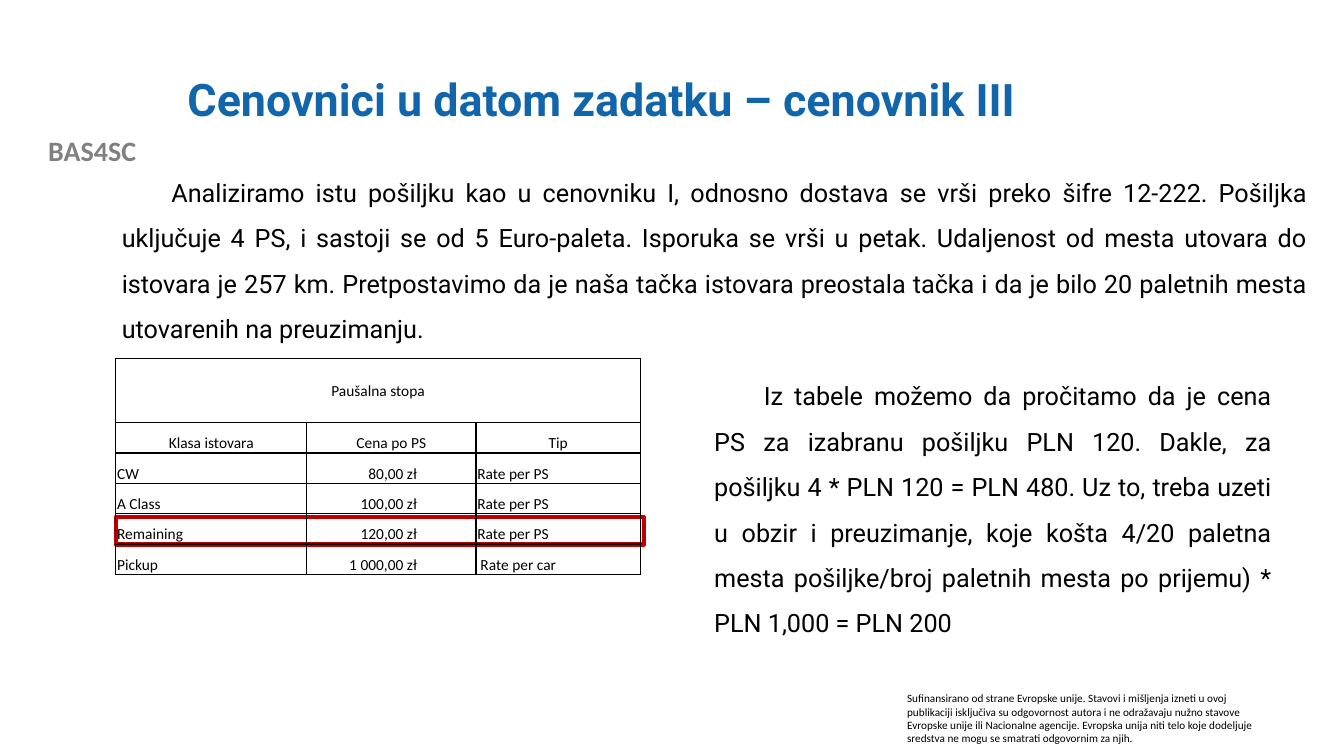
from lxml.etree import SubElement
from pptx import Presentation
from pptx.dml.color import RGBColor
from pptx.enum.shapes import MSO_SHAPE as Shape
from pptx.enum.text import MSO_ANCHOR as Anchor, MSO_AUTO_SIZE as AutoSize, PP_ALIGN as Align
from pptx.oxml.ns import qn
from pptx.util import Cm, Pt

BLACK, BLUE, GRAY, RED = "000000", "1065AB", "808080", "C00000"

TITLE = "Cenovnici u datom zadatku – cenovnik III"
TASK = (
    "Analiziramo istu pošiljku kao u cenovniku I, odnosno dostava se vrši preko šifre 12-222. "
    "Pošiljka uključuje 4 PS, i sastoji se od 5 Euro-paleta. Isporuka se vrši u petak. "
    "Udaljenost od mesta utovara do istovara je 257 km. Pretpostavimo da je naša tačka istovara "
    "preostala tačka i da je bilo 20 paletnih mesta utovarenih na preuzimanju."
)
SOLUTION = (
    "Iz tabele možemo da pročitamo da je cena PS za izabranu pošiljku PLN 120. "
    "Dakle, za pošiljku 4 * PLN 120 = PLN 480. Uz to, treba uzeti u obzir i preuzimanje, "
    "koje košta 4/20 paletna mesta pošiljke/broj paletnih mesta po prijemu) * PLN 1,000 = PLN 200"
)
DISCLAIMER = (
    "Sufinansirano od strane Evropske unije. Stavovi i mišljenja izneti u ovoj publikaciji "
    "isključiva su odgovornost autora i ne odražavaju nužno stavove Evropske unije ili "
    "Nacionalne agencije. Evropska unija niti telo koje dodeljuje sredstva ne mogu se smatrati "
    "odgovornim za njih."
)
TABLE_TITLE = "Paušalna stopa"
TABLE_ROWS = [
    ("Klasa istovara", "Cena po PS", "Tip"),
    ("CW", "80,00 zł", "Rate per PS"),
    ("A Class", "100,00 zł", "Rate per PS"),
    ("Remaining", "120,00 zł", "Rate per PS"),
    ("Pickup", "1 000,00 zł", "Rate per car"),
]
COLUMN_WIDTHS = (4.81, 4.27, 4.14)
COLUMN_ALIGNMENTS = (Align.LEFT, Align.RIGHT, Align.LEFT)
TITLE_ROW_HEIGHT, ROW_HEIGHT = 1.61, 0.765
PRICE_MARGIN = 1.49

BODY_PARAGRAPH = {"alignment": Align.JUSTIFY, "line_spacing": 1.5, "space_after": Pt(6)}


def color(hex_string):
    return RGBColor.from_string(hex_string)


def set_format(target, formats):
    for name, value in formats.items():
        setattr(target, name, value)


def write(paragraph, text, size, font_name, font_color, bold=False, **paragraph_format):
    set_format(paragraph, paragraph_format)
    run = paragraph.add_run()
    run.text = text
    set_format(run.font, {"size": Pt(size), "name": font_name, "bold": bold})
    run.font.color.rgb = color(font_color)


def add_text(slide, box, text, size, font_name, font_color, first_indent=0, **formats):
    frame = slide.shapes.add_textbox(*map(Cm, box)).text_frame
    set_format(frame, {"word_wrap": True, "auto_size": AutoSize.SHAPE_TO_FIT_TEXT})
    paragraph = frame.paragraphs[0]
    if first_indent:
        properties = paragraph._p.get_or_add_pPr()
        properties.set("marL", "0")
        properties.set("indent", str(Cm(first_indent)))
    write(paragraph, text, size, font_name, font_color, **formats)


def fill_title(slide):
    title = slide.shapes.title
    set_format(title, {"left": Cm(4.47), "top": Cm(1.02), "width": Cm(27.08), "height": Cm(3.1)})
    set_format(title.text_frame, {"vertical_anchor": Anchor.MIDDLE, "word_wrap": True,
                                  "auto_size": AutoSize.NONE})
    write(title.text_frame.paragraphs[0], TITLE, 32, "Roboto", BLUE, bold=True,
          alignment=Align.LEFT, line_spacing=0.9)


def add_highlight(slide, box):
    frame = slide.shapes.add_shape(Shape.RECTANGLE, *map(Cm, box))
    frame.shadow.inherit = False
    frame.fill.background()
    frame.line.color.rgb = color(RED)
    frame.line.width = Pt(3)


def add_borders(cell):
    properties = cell._tc.get_or_add_tcPr()
    for side in ("a:lnL", "a:lnR", "a:lnT", "a:lnB"):
        line = SubElement(properties, qn(side), w=str(Pt(1)))
        SubElement(SubElement(line, qn("a:solidFill")), qn("a:srgbClr"), val=BLACK)


def format_cell(cell, anchor):
    add_borders(cell)
    cell.fill.background()
    set_format(cell, {"vertical_anchor": anchor, "margin_left": Cm(0.03), "margin_right": Cm(0.03),
                      "margin_top": Cm(0.03), "margin_bottom": 0})


def add_price_table(slide, left, top):
    height = TITLE_ROW_HEIGHT + ROW_HEIGHT * len(TABLE_ROWS)
    table = slide.shapes.add_table(len(TABLE_ROWS) + 1, len(COLUMN_WIDTHS), Cm(left), Cm(top),
                                   Cm(sum(COLUMN_WIDTHS)), Cm(height)).table
    set_format(table, {"first_row": False, "horz_banding": False})
    for column, width in zip(table.columns, COLUMN_WIDTHS):
        column.width = Cm(width)
    for row in table.rows:
        row.height = Cm(ROW_HEIGHT)
    table.rows[0].height = Cm(TITLE_ROW_HEIGHT)

    for cell in table.rows[0].cells:
        format_cell(cell, Anchor.MIDDLE)
    title_cell = table.cell(0, 0)
    title_cell.merge(table.cell(0, len(COLUMN_WIDTHS) - 1))
    write(title_cell.text_frame.paragraphs[0], TABLE_TITLE, 11, "Calibri", BLACK,
          alignment=Align.CENTER)

    for row_index, values in enumerate(TABLE_ROWS, start=1):
        for column_index, value in enumerate(values):
            cell = table.cell(row_index, column_index)
            format_cell(cell, Anchor.BOTTOM)
            alignment = Align.CENTER if row_index == 1 else COLUMN_ALIGNMENTS[column_index]
            if alignment == Align.RIGHT:
                cell.margin_right = Cm(PRICE_MARGIN)
            write(cell.text_frame.paragraphs[0], value, 11, "Calibri", BLACK, alignment=alignment)
    table.cell(len(TABLE_ROWS), 2).margin_left = Cm(0.11)


def main():
    presentation = Presentation()
    set_format(presentation, {"slide_width": Cm(33.87), "slide_height": Cm(19.05)})
    slide = presentation.slides.add_slide(presentation.slide_layouts[5])

    add_text(slide, (0, 3.25, 4.65, 1.12), "BAS4SC", 20, "Calibri", GRAY, bold=True,
             alignment=Align.CENTER)
    add_text(slide, (22.61, 17.3, 9.4, 1.63), DISCLAIMER, 8, "Calibri", BLACK)
    fill_title(slide)
    add_text(slide, (2.82, 3.96, 30.38, 4.88), TASK, 18, "Roboto", BLACK, first_indent=1.25,
             **BODY_PARAGRAPH)
    add_highlight(slide, (2.92, 13.03, 13.31, 0.69))
    add_text(slide, (17.75, 9.09, 14.55, 8.56), SOLUTION, 18, "Roboto", BLACK, first_indent=1.25,
             **BODY_PARAGRAPH)
    add_price_table(slide, 2.92, 9.04)

    presentation.save("out.pptx")


if __name__ == "__main__":
    main()
